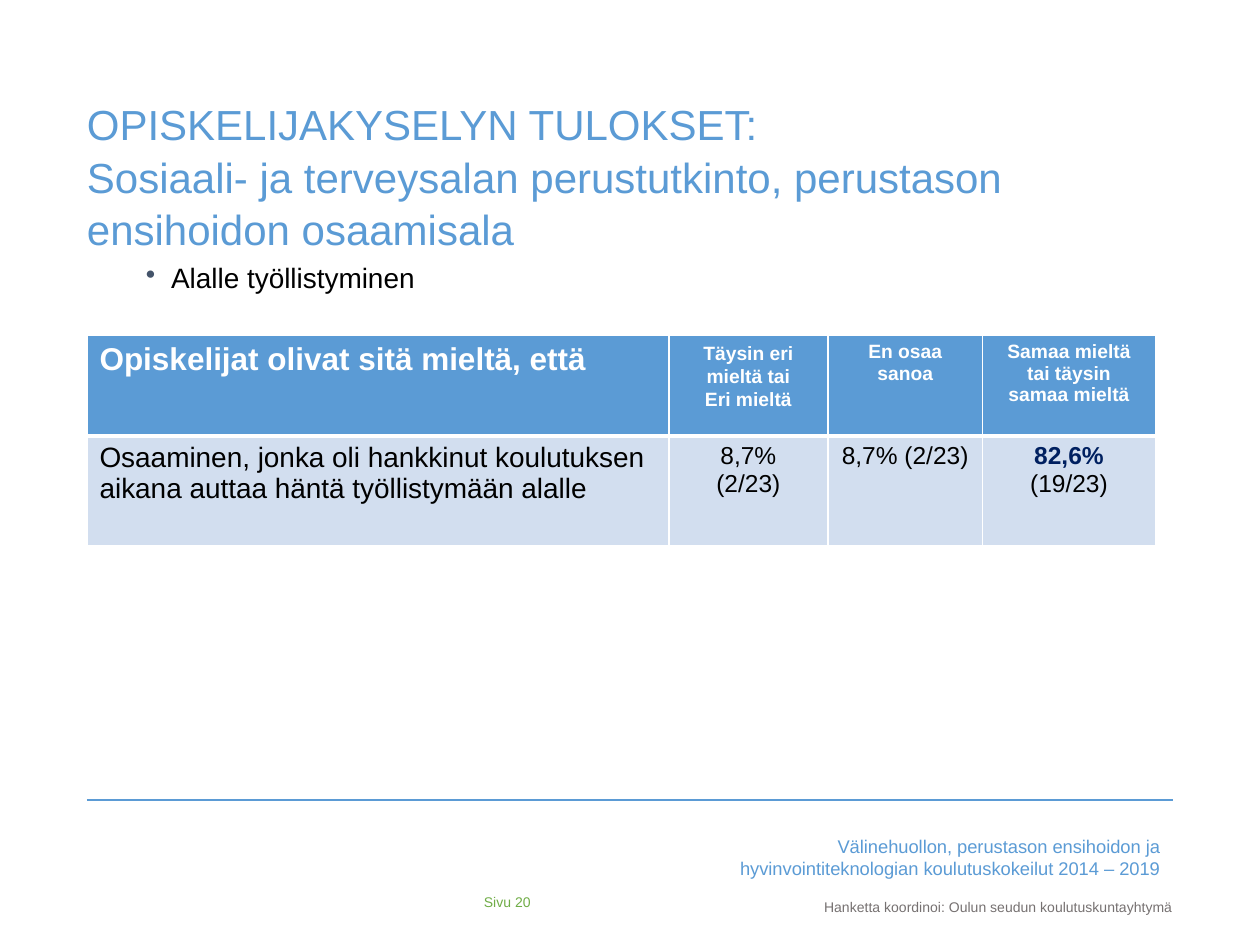
from lxml import etree
from pptx import Presentation
from pptx.dml.color import RGBColor
from pptx.enum.shapes import MSO_CONNECTOR
from pptx.enum.text import MSO_ANCHOR, MSO_AUTO_SIZE, PP_ALIGN
from pptx.oxml.ns import qn
from pptx.util import Inches, Pt

LEFT, CENTER, RIGHT = PP_ALIGN.LEFT, PP_ALIGN.CENTER, PP_ALIGN.RIGHT
TOP, MIDDLE = MSO_ANCHOR.TOP, MSO_ANCHOR.MIDDLE
NO_FIT = MSO_AUTO_SIZE.NONE
STRAIGHT = MSO_CONNECTOR.STRAIGHT

WIDTH, HEIGHT, MARGIN = 10, 7.5, 0.69
CONTENT = WIDTH - 2 * MARGIN
BLUE, PALE, WHITE, BLACK = "5B9BD5", "D2DEEF", "FFFFFF", "000000"
NAVY, GREEN, GREY, SLATE = "002060", "70AD47", "767171", "44546A"
COLUMNS, ROWS = (4.62, 1.26, 1.23, 1.37), (0.8, 0.87)
HEADERS = (
    ["Opiskelijat olivat sitä mieltä, että"],
    ["Täysin eri mieltä tai", "Eri mieltä"],
    ["En osaa sanoa"],
    ["Samaa mieltä tai täysin samaa mieltä"],
)
RESULTS = (
    ["Osaaminen, jonka oli hankkinut koulutuksen aikana auttaa häntä "
     "työllistymään alalle"],
    ["8,7%", "(2/23)"],
    ["8,7% (2/23)"],
    ["82,6%", "(19/23)"],
)


def color(value):
    """Turn a hex string into a colour."""
    return RGBColor.from_string(value)


def style(para, size, shade, align=LEFT, bold=False):
    """Set the font and alignment of a paragraph."""
    para.alignment = align
    font = para.font
    font.name, font.size, font.bold = "Arial", Pt(size), bold
    font.color.rgb = color(shade)


def set_frame(frame, insets, anchor=TOP, wrap=True):
    """Set the margins, anchor and wrapping of a text frame."""
    across, down = insets
    frame.margin_left = frame.margin_right = Inches(across)
    frame.margin_top = frame.margin_bottom = Inches(down)
    frame.vertical_anchor, frame.word_wrap = anchor, wrap
    frame.auto_size = NO_FIT


def add_title(page, text):
    """Place and format the title placeholder."""
    title = page.shapes.title
    title.left, title.top = Inches(MARGIN), Inches(0.76)
    title.width, title.height = Inches(CONTENT), Inches(1.18)
    set_frame(title.text_frame, (0, 0))
    title.text_frame.text = text
    para = title.text_frame.paragraphs[0]
    para.line_spacing = 1.05
    style(para, 24, BLUE)


def add_text(page, area, text, size, shade, align=LEFT, insets=(0.1, 0.05),
             anchor=TOP, wrap=True):
    """Add a one-paragraph text box and return its paragraph."""
    box = page.shapes.add_textbox(*map(Inches, area))
    set_frame(box.text_frame, insets, anchor, wrap)
    para = box.text_frame.paragraphs[0]
    para.text = text
    style(para, size, shade, align)
    return para


def add_bullet(para, shade, indent):
    """Give a paragraph a coloured bullet with a hanging indent."""
    props = para._p.get_or_add_pPr()
    props.set("marL", str(Inches(indent)))
    props.set("indent", str(-Inches(indent)))
    bullet = etree.Element(qn("a:buChar"), char="•")
    tint = etree.Element(qn("a:buClr"))
    etree.SubElement(tint, qn("a:srgbClr"), val=shade)
    props.insert(0, tint)
    props.insert(1, bullet)


def add_rule(page, top):
    """Draw a thin line across the content width."""
    ends = (MARGIN, top, WIDTH - MARGIN, top)
    rule = page.shapes.add_connector(STRAIGHT, *map(Inches, ends))
    rule.line.color.rgb, rule.line.width = color(BLUE), Pt(1)
    etree.SubElement(rule._element.spPr, qn("a:effectLst"))


def set_borders(cell, top, bottom):
    """Give a cell white borders, with top and bottom widths in points."""
    props = cell._tc.get_or_add_tcPr()
    widths = {"lnL": 1, "lnR": 1, "lnT": top, "lnB": bottom}
    for place, (side, width) in enumerate(widths.items()):
        line = etree.Element(qn(f"a:{side}"), w=str(Pt(width)))
        fill = etree.SubElement(line, qn("a:solidFill"))
        etree.SubElement(fill, qn("a:srgbClr"), val=WHITE)
        props.insert(place, line)


def fill_cell(cell, lines, fill, size, shade, align, bold):
    """Write the lines of a cell on a solid fill."""
    cell.fill.solid()
    cell.fill.fore_color.rgb = color(fill)
    cell.text_frame.text = "\n".join(lines)
    for para in cell.text_frame.paragraphs:
        style(para, size, shade, align, bold)


def add_results(page):
    """Add the survey table with a header row and a result row."""
    area = (MARGIN, 2.66, sum(COLUMNS), sum(ROWS))
    table = page.shapes.add_table(
        len(ROWS), len(COLUMNS), *map(Inches, area)).table
    table.horz_banding = False
    for row, height in zip(table.rows, ROWS):
        row.height = Inches(height)
    for index, width in enumerate(COLUMNS):
        table.columns[index].width = Inches(width)
        align = CENTER if index else LEFT
        header, result = table.cell(0, index), table.cell(1, index)
        fill_cell(header, HEADERS[index], BLUE, 11 if index else 18,
                  WHITE, align, True)
        fill_cell(result, RESULTS[index], PALE, 14 if index else 16,
                  BLACK, align, False)
        set_borders(header, 1, 3)
        set_borders(result, 3, 1)
    for para in table.cell(0, 1).text_frame.paragraphs:
        para.line_spacing = 1.07
    style(table.cell(1, 3).text_frame.paragraphs[0], 14, NAVY, CENTER, True)


def main():
    """Build the slide and save the deck."""
    deck = Presentation()
    deck.slide_width, deck.slide_height = Inches(WIDTH), Inches(HEIGHT)
    page = deck.slides.add_slide(deck.slide_layouts[5])
    add_rule(page, 6.35)
    add_text(page, (5.55, 6.58, 3.76, 0.46),
             "Välinehuollon, perustason ensihoidon ja "
             "hyvinvointiteknologian koulutuskokeilut 2014 – 2019",
             10.5, BLUE, RIGHT)
    add_text(page, (6.5, 7.09, 2.88, 0.35),
             "Hanketta koordinoi: Oulun seudun koulutuskuntayhtymä",
             8, GREY, insets=(0.04, 0.04), wrap=False)
    add_text(page, (3.84, 7.04, 1.18, 0.23), "Sivu 20", 8, GREEN,
             insets=(0, 0), anchor=MIDDLE)
    add_title(page, "OPISKELIJAKYSELYN TULOKSET:\v"
                    "Sosiaali- ja terveysalan perustutkinto, perustason "
                    "ensihoidon osaamisala")
    topic = add_text(page, (1.06, 2.02, 8.25, 0.5),
                     "Alalle työllistyminen", 16, BLACK)
    add_bullet(topic, SLATE, 0.2)
    add_results(page)
    deck.save("out.pptx")


if __name__ == "__main__":
    main()
